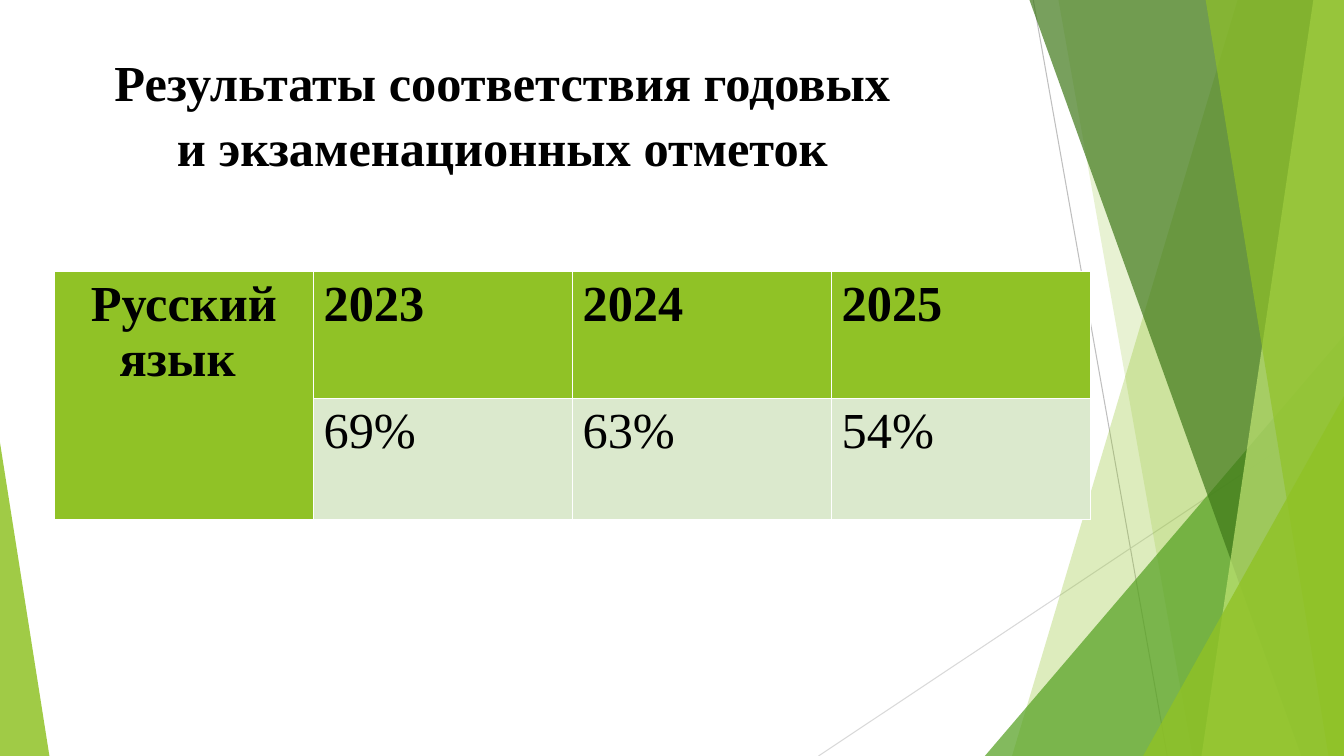
from pptx import Presentation
from pptx import util as u
from pptx.dml.color import RGBColor
from pptx.enum import shapes, text
from pptx.oxml.ns import qn
from lxml import etree

COLORS = {"lime": "90C226", "leaf": "54A021", "forest": "3F7819", "pale": "C0E474",
          "tint": "DBE9CD", "ink": "000000", "rule": "BFBFBF", "faint": "D9D9D9"}
WIDTH, HEIGHT = u.Inches(13.333), u.Inches(7.5)
BLEED = -0.1

RULES = [((76.88, 0), (86.85, 100), "rule"), ((100, 53.73), (60.9, 100), "faint")]
FACETS = [
    ("band", 92.1, 75.3, "lime", 30),
    ("band", 78.75, 88.73, "lime", 20),
    ("corner", (73.28, 44.4, 26.72, 55.6), 1, "leaf", 72),
    ("band", 76.58, 96.83, "forest", 70),
    ("band", 97.73, 89.4, "pale", 70),
    ("band", 89.7, 98.85, "lime", 65),
    ("corner", (85.05, 52.4, 14.95, 47.6), 1, "lime", 80),
    ("corner", (0, 58.53, 3.68, 41.47), 0, "lime", 85),
]
RESULTS = [["Русский язык ", "2023", "2024", "2025"], ["", "69%", "63%", "54%"]]


def across(share):
    """Turn a percentage of the slide width into a length."""
    return u.Emu(round(WIDTH * share / 100))


def down(share):
    """Turn a percentage of the slide height into a length."""
    return u.Emu(round(HEIGHT * share / 100))


def place(box):
    """Turn left, top, width and height shares into lengths."""
    left, top, width, height = box
    return across(left), down(top), across(width), down(height)


def color(name):
    """Look up a colour by name."""
    return RGBColor.from_string(COLORS[name])


def paint(shape, name, opacity):
    """Fill a shape with a partly transparent colour and no outline."""
    shape.shadow.inherit = False
    shape.line.fill.background()
    shape.fill.solid()
    shape.fill.fore_color.rgb = color(name)
    tone = shape.fill._xPr.find(".//" + qn("a:srgbClr"))
    etree.SubElement(tone, qn("a:alpha")).set("val", str(opacity * 1000))


def style_text(para, bold):
    """Set the font shared by the title and the table."""
    formats = {"name": "Times New Roman", "size": u.Pt(36), "bold": bold}
    for span in para.runs:
        for key, value in formats.items():
            setattr(span.font, key, value)
        span.font.color.rgb = color("ink")


def add_facets(page):
    """Draw the thin rules and the overlapping green facets."""
    for start, end, name in RULES:
        rule = page.shapes.add_connector(
            shapes.MSO_CONNECTOR.STRAIGHT, across(start[0]), down(start[1]),
            across(end[0]), down(end[1]))
        rule.line.color.rgb = color(name)
        rule.line.width = u.Pt(0.75)
        etree.SubElement(rule._element.spPr, qn("a:effectLst"))
    for kind, first, second, name, opacity in FACETS:
        if kind == "band":
            outline = page.shapes.build_freeform(across(first), down(BLEED))
            corners = [(100, BLEED), (100, 100), (second, 100)]
            outline.add_line_segments([(across(x), down(y)) for x, y in corners])
            facet = outline.convert_to_shape()
        else:
            facet = page.shapes.add_shape(
                shapes.MSO_SHAPE.ISOSCELES_TRIANGLE, *place(first))
            facet.adjustments[0] = second
        paint(facet, name, opacity)


def add_title(page, box):
    """Move and format the title placeholder."""
    title = page.shapes.title
    title.left, title.top, title.width, title.height = place(box)
    frame = title.text_frame
    frame.text = "Результаты соответствия годовых и экзаменационных отметок"
    formats = {"word_wrap": True, "vertical_anchor": text.MSO_ANCHOR.TOP,
               "auto_size": text.MSO_AUTO_SIZE.NONE}
    for key, value in formats.items():
        setattr(frame, key, value)
    para = frame.paragraphs[0]
    para.alignment = text.PP_ALIGN.CENTER
    para.line_spacing = 1.08
    style_text(para, True)


def add_results(page, box, row_shares):
    """Place the table of yearly results."""
    table = page.shapes.add_table(len(RESULTS), len(RESULTS[0]), *place(box)).table
    for row, share in zip(table.rows, row_shares):
        row.height = down(share)
    table.cell(0, 0).merge(table.cell(1, 0))
    for i, values in enumerate(RESULTS):
        for j, value in enumerate(values):
            cell = table.cell(i, j)
            heading = i == 0 or j == 0
            cell.fill.solid()
            cell.fill.fore_color.rgb = color("lime" if heading else "tint")
            if value:
                cell.text = value
                style_text(cell.text_frame.paragraphs[0], heading)
    table.cell(0, 0).text_frame.paragraphs[0].alignment = text.PP_ALIGN.CENTER


def main():
    """Build and save the deck."""
    deck = Presentation()
    deck.slide_width, deck.slide_height = WIDTH, HEIGHT
    page = deck.slides.add_slide(deck.slide_layouts[5])
    add_facets(page)
    add_title(page, (7.65, 5.47, 59.48, 27.2))
    add_results(page, (4.05, 35.87, 77.1, 28.4), (16.8, 11.6))
    deck.save("out.pptx")


if __name__ == "__main__":
    main()
